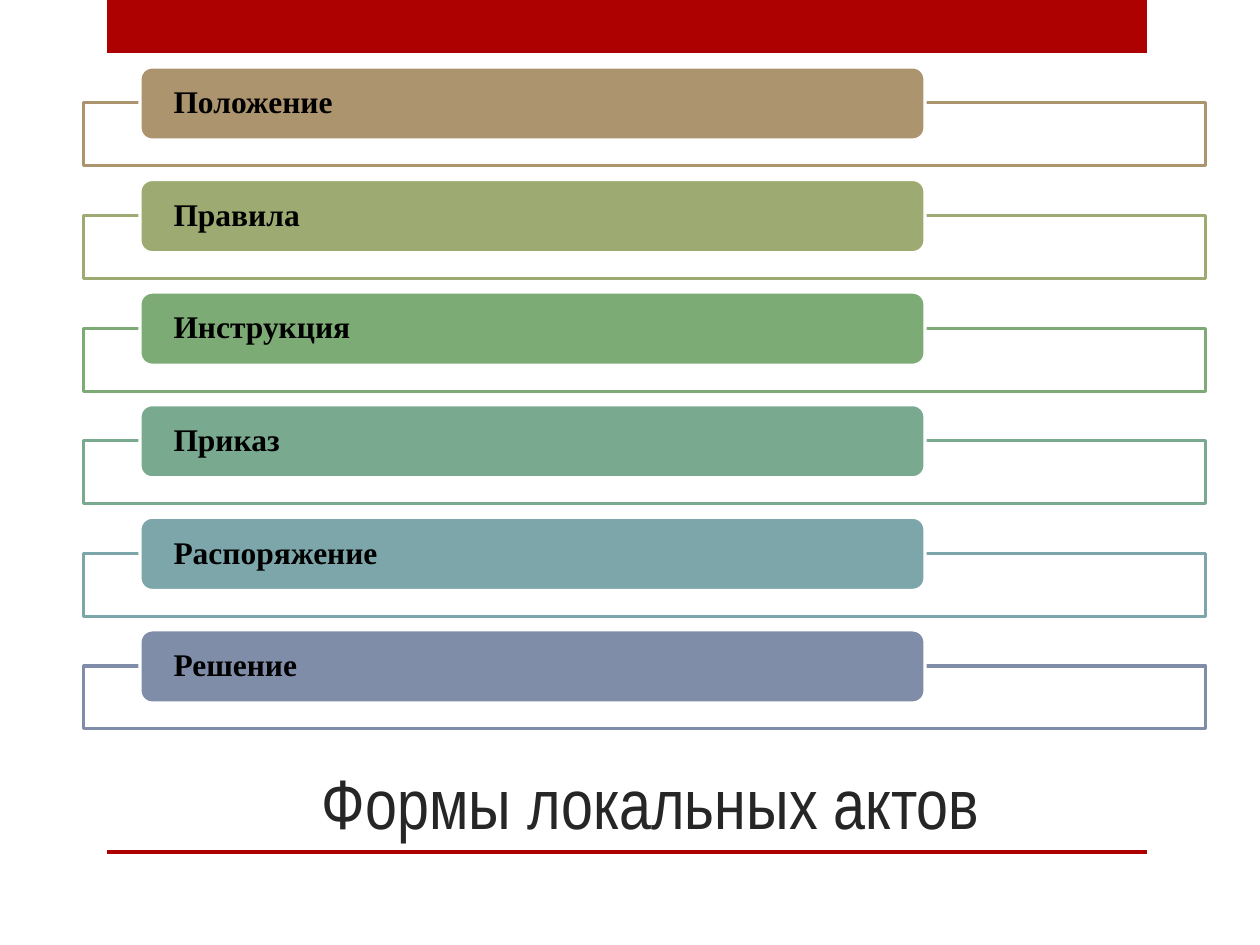
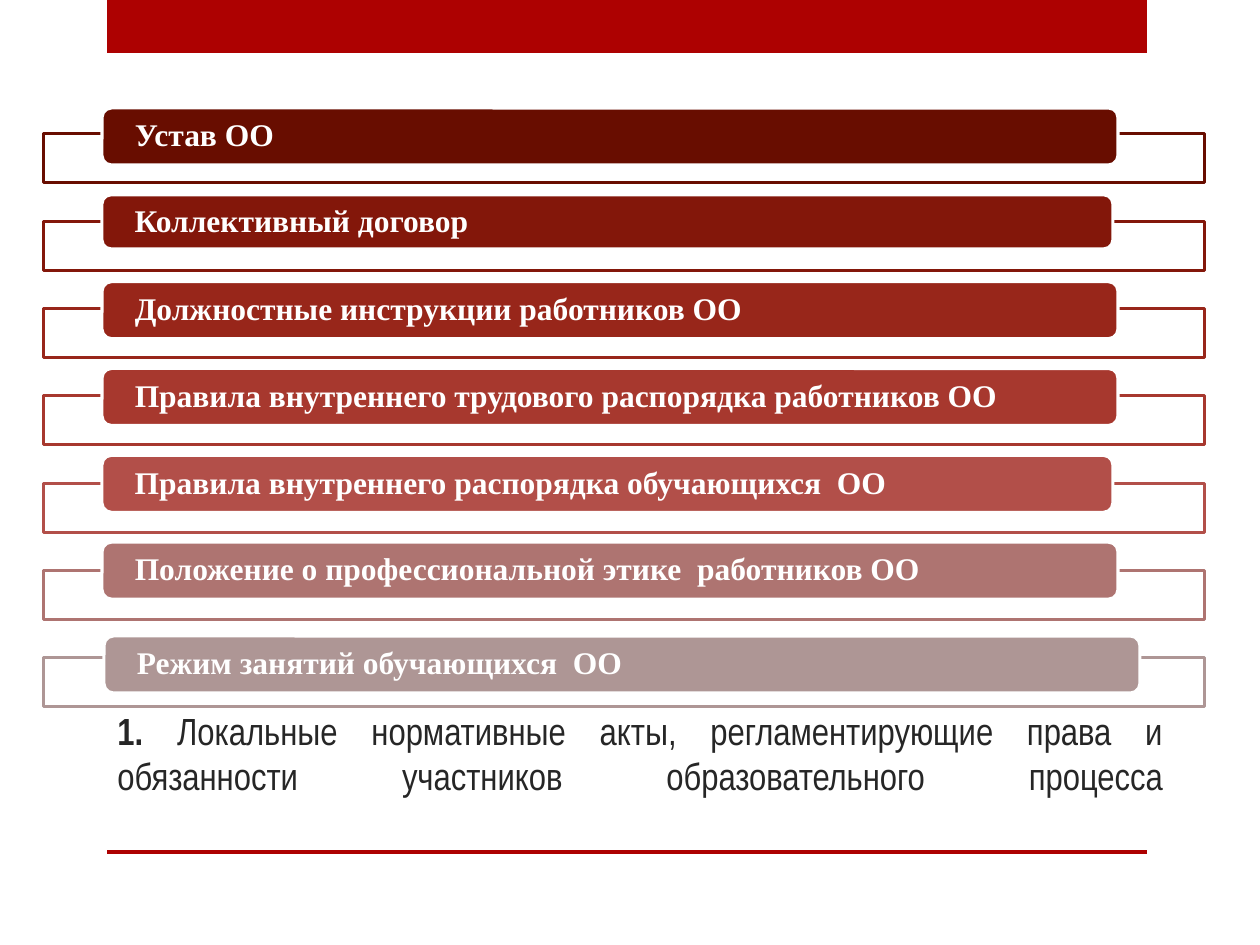
from dataclasses import dataclass

from lxml import etree
from pptx import Presentation
from pptx.dml.color import RGBColor
from pptx.enum.shapes import MSO_SHAPE
from pptx.enum.text import MSO_ANCHOR, PP_ALIGN
from pptx.oxml.ns import qn
from pptx.util import Emu, Pt

RECT, ROUNDED = MSO_SHAPE.RECTANGLE, MSO_SHAPE.ROUNDED_RECTANGLE
MIDDLE, BOTTOM = MSO_ANCHOR.MIDDLE, MSO_ANCHOR.BOTTOM
LEFT, CENTER, JUSTIFY = PP_ALIGN.LEFT, PP_ALIGN.CENTER, PP_ALIGN.JUSTIFY


@dataclass(frozen=True)
class Theme:
    accent: str = "AD0101"
    white: str = "FFFFFF"
    black: str = "000000"
    title_ink: str = "262626"
    title_font: str = "Arial Narrow"
    label_font: str = "Times New Roman"
    label_size: float = 18
    outline: float = 1.75
    frame_opacity: int = 90
    label_inset: int = 30


THEME = Theme()
EMU_PER_PX = 914400 / 126
PAGE_SIZE = (1260, 945)
BANDS = [(107, 0, 1040, 53), (107, 850, 1040, 4)]

# A row is (text, colour, changes to the regular label box).
# Frame and label boxes are those of the first row; "travel" is the
# distance in px from the first row to the last.
PAGES = [
    {
        "title": {"box": (105, 630, 1091, 220), "align": CENTER, "size": 40,
                  "spans": [("Формы локальных актов", False)], "trailing_line": False},
        "frame": {"left": 84, "top": 103, "width": 1122, "height": 63, "travel": 563},
        "label": {"left": 140, "top": 67, "width": 785, "height": 73, "travel": 563},
        "ink": THEME.black,
        "rows": [
            ("Положение", "AC956E", {}),
            ("Правила", "9DAB72", {}),
            ("Инструкция", "7DAB75", {}),
            ("Приказ", "79AA90", {}),
            ("Распоряжение", "7CA6AA", {}),
            ("Решение", "808DA9", {}),
        ],
    },
    {
        "title": {"box": (105, 711, 1071, 139), "align": JUSTIFY, "size": 21.6,
                  "spans": [("1. ", True),
                            ("Локальные нормативные акты, регламентирующие права и "
                             "обязанности участников образовательного процесса", False)],
                  "trailing_line": True},
        "frame": {"left": 44, "top": 134, "width": 1161, "height": 49, "travel": 524},
        "label": {"left": 102, "top": 108, "width": 1016, "height": 57, "travel": 521},
        "ink": THEME.white,
        "rows": [
            ("Устав ОО", "680D00", {}),
            ("Коллективный договор", "83170A", {"width": 1011, "height": 54}),
            ("Должностные инструкции работников ОО", "98261A", {}),
            ("Правила внутреннего трудового распорядка работников ОО", "A7382E", {}),
            ("Правила внутреннего распорядка обучающихся  ОО", "B24F49", {"width": 1011}),
            ("Положение о профессиональной этике  работников ОО", "AE7471", {}),
            ("Режим занятий обучающихся  ОО", "AE9695",
             {"left": 104, "top": 636, "width": 1036}),
        ],
    },
]


def px(value):
    return Emu(round(value * EMU_PER_PX))


def apply_format(target, values):
    for name, value in values.items():
        setattr(target, name, value)


def add_box(page, preset, box, fill, line=None):
    shape = page.shapes.add_shape(preset, *map(px, box))
    shape.shadow.inherit = False
    shape.fill.solid()
    shape.fill.fore_color.rgb = RGBColor.from_string(fill)
    if line:
        shape.line.color.rgb = RGBColor.from_string(line)
        shape.line.width = Pt(THEME.outline)
    else:
        shape.line.fill.background()
    return shape


def add_span(para, text, font, size, ink, bold):
    span = para.add_run()
    span.text = text
    apply_format(span.font, {"name": font, "size": Pt(size), "bold": bold})
    span.font.color.rgb = RGBColor.from_string(ink)


def set_opacity(shape, percent):
    colour = shape.fill._xPr.find(qn("a:solidFill"))[0]
    etree.SubElement(colour, qn("a:alpha"), val=str(percent * 1000))


def add_title(page, title):
    box = page.shapes.add_textbox(*map(px, title["box"]))
    apply_format(box.text_frame, {"word_wrap": True, "vertical_anchor": BOTTOM})
    para = box.text_frame.paragraphs[0]
    para.alignment = title["align"]
    for text, bold in title["spans"]:
        add_span(para, text, THEME.title_font, title["size"], THEME.title_ink, bold)
    if title["trailing_line"]:
        para.add_line_break()
        end = etree.SubElement(para._p, qn("a:endParaRPr"), sz=str(round(title["size"] * 100)))
        etree.SubElement(end, qn("a:latin"), typeface=THEME.title_font)


def row_box(first, share, changes):
    """Box of the row that lies at this share (0 to 1) of the travel."""
    box = {**first, "top": first["top"] + first["travel"] * share, **changes}
    return [box[side] for side in ("left", "top", "width", "height")]


def add_row(page, content, index):
    text, colour, changes = content["rows"][index]
    share = index / (len(content["rows"]) - 1)
    frame = add_box(page, RECT, row_box(content["frame"], share, {}), THEME.white, colour)
    set_opacity(frame, THEME.frame_opacity)
    label = add_box(page, ROUNDED, row_box(content["label"], share, changes),
                    colour, THEME.white)
    inset = px(THEME.label_inset)
    apply_format(label.text_frame, {
        "word_wrap": True, "vertical_anchor": MIDDLE, "margin_left": inset,
        "margin_right": inset, "margin_top": 0, "margin_bottom": 0})
    para = label.text_frame.paragraphs[0]
    apply_format(para, {"alignment": LEFT, "line_spacing": 0.9})
    add_span(para, text, THEME.label_font, THEME.label_size, content["ink"], True)


def add_page(deck, content):
    page = deck.slides.add_slide(deck.slide_layouts[6])
    for band in BANDS:
        add_box(page, RECT, band, THEME.accent)
    add_title(page, content["title"])
    for index in range(len(content["rows"])):
        add_row(page, content, index)


def main():
    deck = Presentation()
    deck.slide_width, deck.slide_height = map(px, PAGE_SIZE)
    for content in PAGES:
        add_page(deck, content)
    deck.save("out.pptx")


if __name__ == "__main__":
    main()
